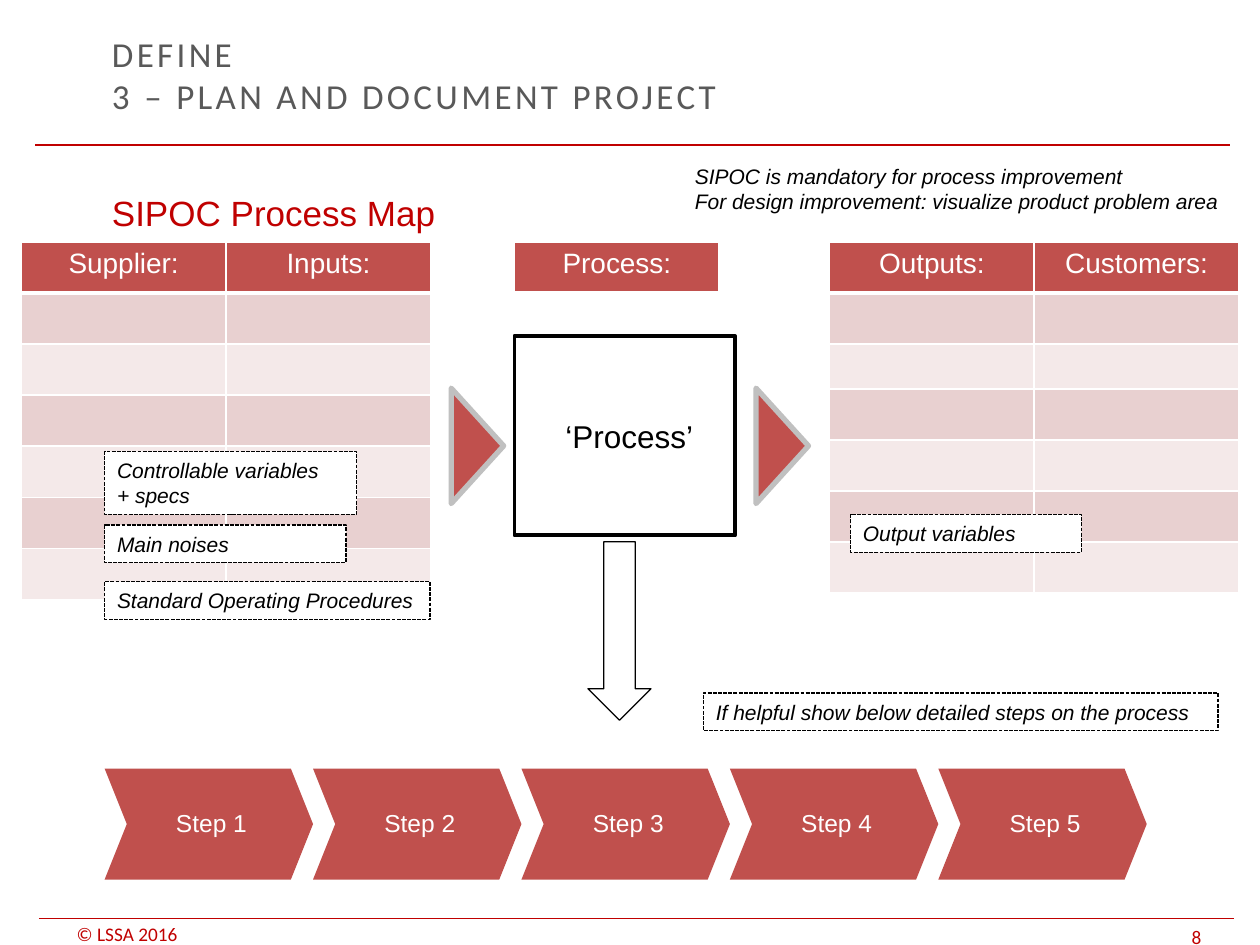
from lxml.etree import SubElement
from pptx import Presentation
from pptx.dml.color import RGBColor
from pptx.enum.dml import MSO_LINE
from pptx.enum.shapes import MSO_CONNECTOR, MSO_SHAPE
from pptx.enum.text import MSO_ANCHOR, PP_ALIGN
from pptx.oxml import parse_xml
from pptx.oxml.ns import nsdecls, qn
from pptx.util import Pt

COLORS = {
    "red": "C00000", "brick": "C0504D", "rose": "E8D0D0", "blush": "F4E9E9",
    "gray": "595959", "silver": "C0C0C0", "black": "000000", "white": "FFFFFF",
}
HUES = {name: RGBColor.from_string(code) for name, code in COLORS.items()}


def write(frame, lines, size, hue, face="Arial", italic=False, align=PP_ALIGN.LEFT):
    """Fill a text frame with one paragraph per line."""
    for i, line in enumerate(lines):
        para = frame.add_paragraph() if i else frame.paragraphs[0]
        para.alignment = align
        run = para.add_run()
        run.text = line
        font = run.font
        font.name, font.size, font.italic, font.bold = face, Pt(size), italic, False
        font.color.rgb = HUES[hue]


def grid(left, heads, heights):
    """Add a banded table with a header row."""
    shape = slide.shapes.add_table(len(heights), len(heads), Pt(left), Pt(138.2),
                                   Pt(117 * len(heads)), Pt(sum(heights)))
    table = shape.table
    for col in table.columns:
        col.width = Pt(117)
    for r, height in enumerate(heights):
        table.rows[r].height = Pt(height)
        for c, head in enumerate(heads):
            cell = table.cell(r, c)
            cell.fill.solid()
            if r == 0:
                cell.fill.fore_color.rgb = HUES["brick"]
                write(cell.text_frame, [head], 16, "white", align=PP_ALIGN.CENTER)
            else:
                cell.fill.fore_color.rgb = HUES["rose" if r % 2 else "blush"]
                para = cell.text_frame.paragraphs[0]
                SubElement(para._p, qn("a:endParaRPr"), sz="1200")
            props = cell._tc.get_or_add_tcPr()
            for i, side in enumerate("LRTB"):
                width = 3 if side == "B" and r == 0 else 1
                props.insert(i, parse_xml(
                    f'<a:ln{side} {nsdecls("a")} w="{Pt(width)}"><a:solidFill>'
                    f'<a:srgbClr val="{COLORS["white"]}"/></a:solidFill></a:ln{side}>'))


deck = Presentation()
deck.slide_width, deck.slide_height = Pt(720), Pt(540)
slide = deck.slides.add_slide(deck.slide_layouts[6])

# Rules above and below the content
for left, top in ((20.2, 82.8), (22.3, 524.9)):
    rule = slide.shapes.add_connector(MSO_CONNECTOR.STRAIGHT, Pt(left), Pt(top),
                                      Pt(left + 682.6), Pt(top))
    rule.line.color.rgb = HUES["red"]
    rule.line.width = Pt(0.75)
    SubElement(rule._element.spPr, qn("a:effectLst"))

# Footer
for left, top, width, height, words in (
    (36.7, 527, 102.2, 13, "© LSSA 2016"),
    (673.9, 526.3, 46.1, 15.8, "8"),
):
    box = slide.shapes.add_textbox(Pt(left), Pt(top), Pt(width), Pt(height))
    frame = box.text_frame
    frame.word_wrap = False
    frame.vertical_anchor = MSO_ANCHOR.BOTTOM
    frame.margin_top = frame.margin_bottom = 0
    write(frame, [words], 11, "red", "Calibri")

# Title, heading and remark
title = slide.shapes.add_textbox(Pt(56.9), Pt(18.7), Pt(510.5), Pt(47.5)).text_frame
title.word_wrap = True
title.vertical_anchor = MSO_ANCHOR.MIDDLE
write(title, ["DEFINE", "3 – PLAN AND DOCUMENT PROJECT"], 20, "gray", "Calibri")
for para in title.paragraphs:
    para.runs[0].font._element.set("spc", "190")

body = slide.shapes.add_textbox(Pt(56.9), Pt(105.8), Pt(623.5), Pt(396.7)).text_frame
body.word_wrap = True
write(body, ["SIPOC Process Map"], 20, "red")

remark = slide.shapes.add_textbox(Pt(390), Pt(90), Pt(326.2), Pt(36)).text_frame
remark.word_wrap = False
write(remark, ["SIPOC is mandatory for process improvement",
               "For design improvement: visualize product problem area"],
      12, "black", italic=True)

# Tables
ROW = 29.2
grid(474, ["Outputs:", "Customers:"], [ROW] * 2 + [25.6] + [ROW] * 4)
grid(12.2, ["Supplier:", "Inputs:"], [ROW] * 7)
grid(294, ["Process:"], [ROW])

# Process box between two triangles
for left in (239.8, 414):
    tip = slide.shapes.add_shape(MSO_SHAPE.ISOSCELES_TRIANGLE, Pt(left), Pt(239.8),
                                 Pt(66), Pt(30))
    tip.rotation = 90
    tip.shadow.inherit = False
    tip.fill.solid()
    tip.fill.fore_color.rgb = HUES["brick"]
    tip.line.color.rgb = HUES["silver"]
    tip.line.width = Pt(3)

core = slide.shapes.add_shape(MSO_SHAPE.RECTANGLE, Pt(294), Pt(192), Pt(126), Pt(114))
core.shadow.inherit = False
core.fill.background()
core.line.color.rgb = HUES["black"]
core.line.width = Pt(2.25)
core.text_frame.margin_left = Pt(12.2)
core.text_frame.vertical_anchor = MSO_ANCHOR.MIDDLE
write(core.text_frame, ["‘Process’"], 18, "black", align=PP_ALIGN.CENTER)

# Dashed notes
for left, top, width, lines in (
    (486, 294, 132, ["Output variables"]),
    (59.8, 300, 138, ["Main noises"]),
    (59.8, 332.4, 186, ["Standard Operating Procedures"]),
    (59.8, 258, 144, ["Controllable variables", "+ specs"]),
    (402, 396, 294, ["If helpful show below detailed steps on the process"]),
):
    note = slide.shapes.add_shape(MSO_SHAPE.RECTANGLE, Pt(left), Pt(top), Pt(width),
                                  Pt(7.2 + 14.4 * len(lines)))
    note.shadow.inherit = False
    note.fill.solid()
    note.fill.fore_color.rgb = HUES["white"]
    note.line.color.rgb = HUES["black"]
    note.line.width = Pt(0.75)
    note.line.dash_style = MSO_LINE.SQUARE_DOT
    note.text_frame.word_wrap = True
    note.text_frame.vertical_anchor = MSO_ANCHOR.TOP
    write(note.text_frame, lines, 12, "black", italic=True)

# Detailed steps
for i in range(5):
    step = slide.shapes.add_shape(MSO_SHAPE.CHEVRON, Pt(59.8 + 119.1 * i), Pt(439.2),
                                  Pt(119.1), Pt(63.4))
    step.adjustments[0] = 0.2
    step.shadow.inherit = False
    step.fill.solid()
    step.fill.fore_color.rgb = HUES["brick"]
    step.line.fill.background()
    frame = step.text_frame
    # The chevron's text area is already inset evenly at both ends
    frame.margin_left, frame.margin_right = Pt(3), Pt(0)
    frame.margin_top = frame.margin_bottom = Pt(1.4)
    frame.vertical_anchor = MSO_ANCHOR.MIDDLE
    write(frame, [f"Step {i + 1}"], 14, "white", align=PP_ALIGN.CENTER)
    frame.paragraphs[0].line_spacing = 0.9

arrow = slide.shapes.add_shape(MSO_SHAPE.DOWN_ARROW, Pt(336), Pt(309.6), Pt(36), Pt(102))
arrow.shadow.inherit = False
arrow.fill.solid()
arrow.fill.fore_color.rgb = HUES["white"]
arrow.line.color.rgb = HUES["black"]
arrow.line.width = Pt(0.75)

deck.save("out.pptx")
